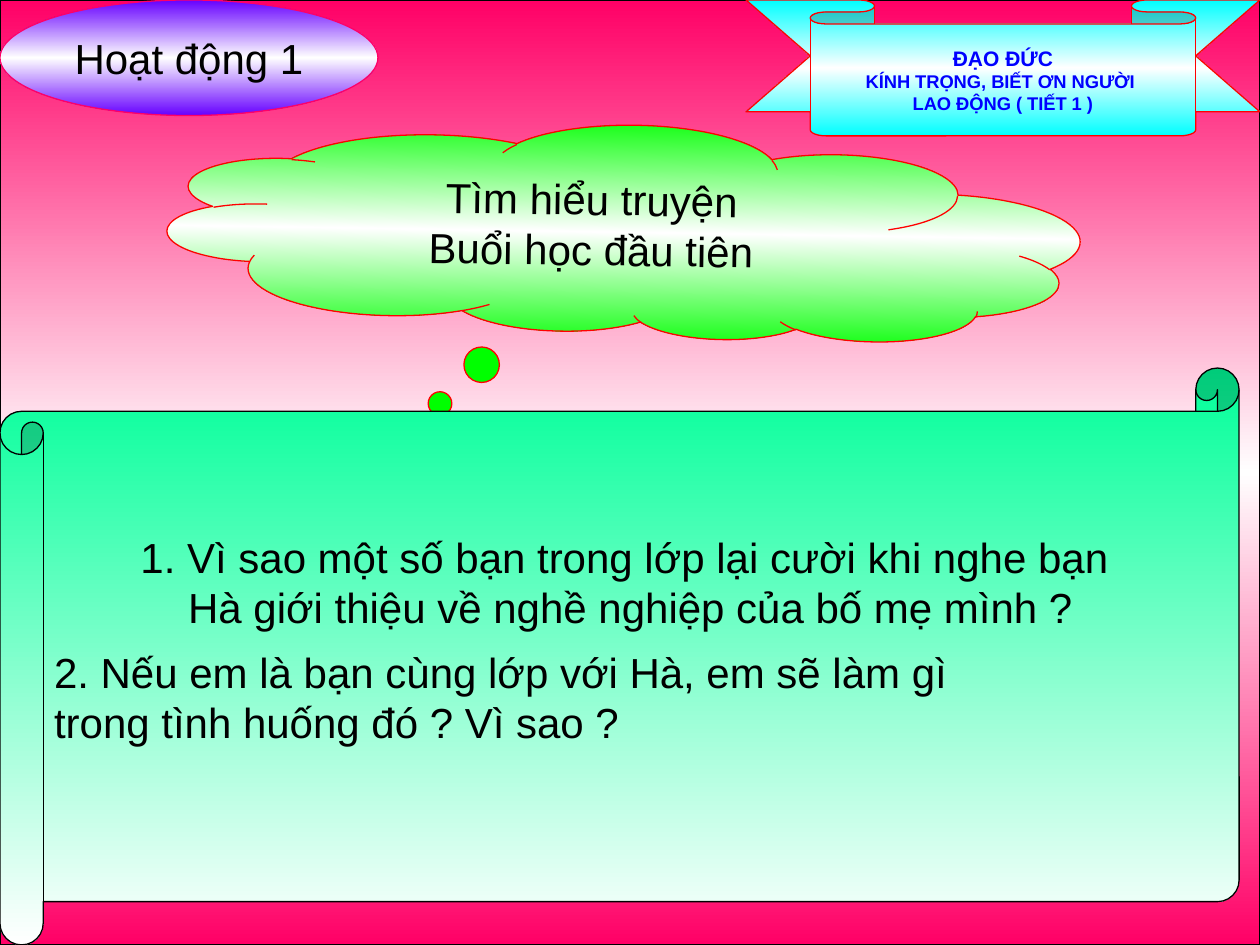
import copy

import pptx
import pptx.dml.color
import pptx.enum.shapes
import pptx.enum.text
import pptx.util

Cm = pptx.util.Cm
Pt = pptx.util.Pt
SHAPES = pptx.enum.shapes.MSO_SHAPE
ALIGN = pptx.enum.text.PP_ALIGN
ANCHOR = pptx.enum.text.MSO_ANCHOR


def color(hex_string):
    return pptx.dml.color.RGBColor.from_string(hex_string)


def fill_gradient(shape, colors):
    """Fill from top to bottom with evenly spaced colours."""
    shape.fill.gradient()
    shape.fill.gradient_angle = 270
    stops = shape.fill._fill._gradFill.gsLst
    while len(stops) < len(colors):
        stops.append(copy.deepcopy(stops[0]))
    for index, (stop, value) in enumerate(zip(shape.fill.gradient_stops, colors)):
        stop.color.rgb = color(value)
        stop.position = index / (len(colors) - 1)


def add_shape(slide, kind, box, colors, line, percents=()):
    """Add a gradient shape; percents are its adjustments."""
    shape = slide.shapes.add_shape(kind, *(Cm(length) for length in box))
    shape.shadow.inherit = False
    fill_gradient(shape, colors)
    shape.line.color.rgb = color(line)
    shape.line.width = Pt(0.75)
    for index, percent in enumerate(percents):
        shape.adjustments[index] = percent / 100
    return shape


def write_lines(shape, lines, sizes, font_color="000000", bold=False,
                align=ALIGN.CENTER, anchor=ANCHOR.MIDDLE, wrap=False):
    text_frame = shape.text_frame
    text_frame.text = "\n".join(lines)
    text_frame.word_wrap = wrap
    text_frame.vertical_anchor = anchor
    for paragraph, size in zip(text_frame.paragraphs, sizes):
        paragraph.alignment = align
        for run in paragraph.runs:
            run.font.name = "Arial"
            run.font.size = Pt(size)
            run.font.bold = bold
            run.font.color.rgb = color(font_color)


def add_backdrop(slide, box):
    add_shape(slide, SHAPES.RECTANGLE, box, ["FF0066", "FFFFFF", "FF0066"], "000000")


def add_story_cloud(slide, box):
    cloud = add_shape(slide, SHAPES.CLOUD_CALLOUT, box,
                      ["00FF00", "FFFFFF", "00FF00"], "FF0000", [-23.4, -96.5])
    write_lines(cloud, ["Tìm hiểu truyện", "Buổi học đầu tiên"], [24, 24],
                anchor=ANCHOR.TOP, wrap=True)
    # Flip the cloud and turn its text upright again
    cloud.rotation = 0.9
    cloud.element.spPr.xfrm.set("flipV", "1")
    cloud.text_frame._txBody.bodyPr.set("rot", "10800000")


def add_lesson_ribbon(slide, box):
    ribbon = add_shape(slide, SHAPES.DOWN_RIBBON, box,
                       ["00FFFF", "FFFFFF", "00FFFF"], "FF0000", [17.7, 75])
    write_lines(ribbon,
                ["ĐẠO ĐỨC", "KÍNH TRỌNG, BIẾT ƠN NGƯỜI ", "LAO ĐỘNG ( TIẾT 1 )"],
                [12, 10.5, 10.5], font_color="0000FF", bold=True)


def add_activity_label(slide, box):
    label = add_shape(slide, SHAPES.FLOWCHART_CONNECTOR, box,
                      ["6600FF", "FFFFFF", "6600FF"], "FF0066")
    write_lines(label, ["Hoạt động 1"], [24])


def add_question_scroll(slide, box):
    left, top, width, height = box
    scroll = add_shape(slide, SHAPES.HORIZONTAL_SCROLL, box,
                       ["00FF99", "FFFFFF"], "000000", [7.5])
    write_lines(scroll,
                ["1. Vì sao một số bạn trong lớp lại cười khi nghe bạn ",
                 "Hà giới thiệu về nghề nghiệp của bố mẹ mình ?"], [24, 24])
    # The bottom margin lifts the first question above the second
    scroll.text_frame.margin_bottom = Cm(3.15)

    second = slide.shapes.add_textbox(Cm(left + 0.84), Cm(top + 5.48),
                                      Cm(width - 1.04), Cm(2.31))
    write_lines(second,
                ["2. Nếu em là bạn cùng lớp với Hà, em sẽ làm gì",
                 "trong tình huống đó ? Vì sao ?"], [24, 24],
                align=ALIGN.LEFT, anchor=ANCHOR.TOP, wrap=True)
    second.text_frame.auto_size = pptx.enum.text.MSO_AUTO_SIZE.SHAPE_TO_FIT_TEXT


def main():
    presentation = pptx.Presentation()
    presentation.slide_width = Cm(25.4)
    presentation.slide_height = Cm(19.05)
    slide = presentation.slides.add_slide(presentation.slide_layouts[6])

    # Boxes are left, top, width, height in centimetres
    add_backdrop(slide, (0, 0, 25.4, 19.05))
    add_story_cloud(slide, (3.38, 2.54, 18.39, 4.29))
    add_lesson_ribbon(slide, (15.04, 0, 10.36, 2.74))
    add_activity_label(slide, (0, 0, 7.62, 2.33))
    add_question_scroll(slide, (0, 7.42, 24.98, 11.63))

    presentation.save("out.pptx")


if __name__ == "__main__":
    main()
